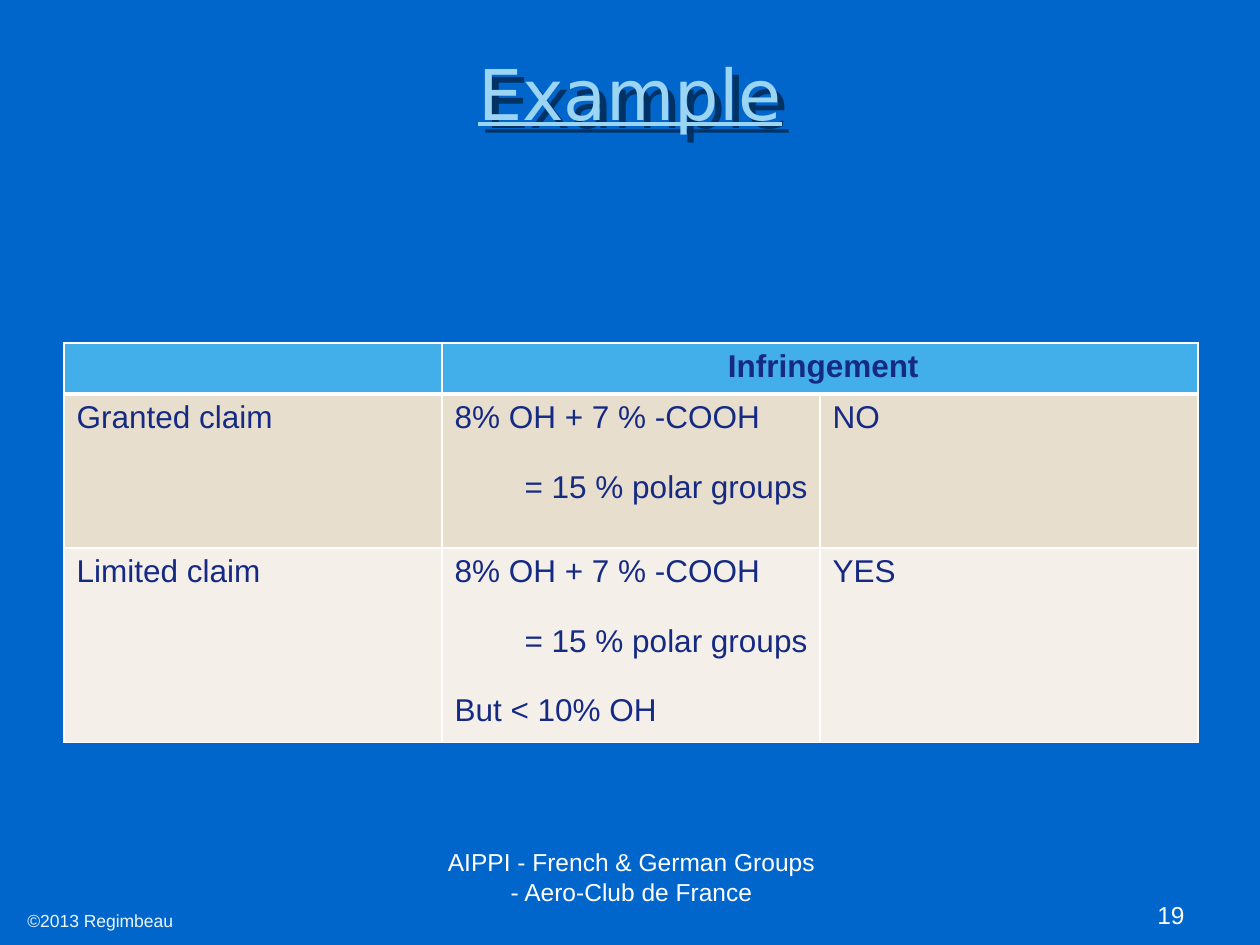
from lxml import etree
from pptx import Presentation
from pptx import util as u
from pptx.dml.color import RGBColor
from pptx.enum import text
from pptx.oxml import ns

SCALE = 914400 / 126
COLORS = {
    "background": "0066CC", "title": "9CD5F4", "shadow": "000000",
    "header": "42AFEA", "granted": "E8DECE", "limited": "F4EFE8",
    "ink": "152A83", "white": "FFFFFF", "copyright": "EBF7FD",
}
FORMULA = ["8% OH + 7 % -COOH", "= 15 % polar groups"]
ROWS = [
    ("header", 51, [[], ["Infringement"], []]),
    ("granted", 154, [["Granted claim"], FORMULA, ["NO"]]),
    ("limited", 190, [["Limited claim"], FORMULA + ["But < 10% OH"], ["YES"]]),
]


def px(length):
    """Turn pixels into EMU."""
    return u.Emu(round(length * SCALE))


def rgb(name):
    """Look up a named colour."""
    return RGBColor.from_string(COLORS[name])


def add_run(paragraph, words, size, color, font="Arial"):
    """Add one styled run to a paragraph."""
    run = paragraph.add_run()
    run.text = words
    run.font.size = u.Pt(size)
    run.font.name = font
    run.font.color.rgb = rgb(color)
    return run


def add_label(slide, box, words, size, color, align, font="Arial"):
    """Add a wrapped one-paragraph text box."""
    shape = slide.shapes.add_textbox(*map(px, box))
    shape.text_frame.word_wrap = True
    paragraph = shape.text_frame.paragraphs[0]
    paragraph.alignment = align
    add_run(paragraph, words, size, color, font)
    return shape


def add_title(slide):
    """Add the underlined title with its text shadow."""
    shape = add_label(slide, (63, 38, 1134, 110), "Example", 40, "title",
                      text.PP_ALIGN.CENTER, "DejaVu Sans")
    shape.text_frame.vertical_anchor = text.MSO_ANCHOR.MIDDLE
    shape.text_frame.paragraphs[0].runs[0].font.underline = True
    effects = etree.SubElement(shape._element.spPr, ns.qn("a:effectLst"))
    shadow = etree.SubElement(effects, ns.qn("a:outerShdw"),
                              dist=str(px(10)), dir="2700000", algn="tl")
    color = etree.SubElement(shadow, ns.qn("a:srgbClr"), val=COLORS["shadow"])
    etree.SubElement(color, ns.qn("a:alpha"), val="50000")


def set_borders(cell, top, bottom):
    """Draw white cell borders, with top and bottom widths in points."""
    properties = cell._tc.get_or_add_tcPr()
    for side, width in (("L", 1), ("R", 1), ("T", top), ("B", bottom)):
        line = etree.SubElement(properties, ns.qn(f"a:ln{side}"), w=str(u.Pt(width)))
        fill = etree.SubElement(line, ns.qn("a:solidFill"))
        etree.SubElement(fill, ns.qn("a:srgbClr"), val=COLORS["white"])


def fill_cell(cell, lines, is_header):
    """Write a cell's paragraphs, indenting the sum."""
    for index, words in enumerate(lines):
        frame = cell.text_frame
        paragraph = frame.add_paragraph() if index else frame.paragraphs[0]
        if index:
            paragraph.space_before = u.Pt(19.6)
        if is_header:
            paragraph.alignment = text.PP_ALIGN.CENTER
        if words.startswith("="):
            paragraph._p.get_or_add_pPr().set("marL", str(px(70)))
        add_run(paragraph, words, 18, "ink").font.bold = is_header


def add_claims_table(slide):
    """Add the table comparing both claims."""
    height = sum(row[1] for row in ROWS)
    frame = slide.shapes.add_table(3, 3, px(64), px(343), px(1134), px(height))
    table = frame.table
    for column in table.columns:
        column.width = px(378)
    for index, (color, row_height, contents) in enumerate(ROWS):
        table.rows[index].height = px(row_height)
        for cell, lines in zip(table.rows[index].cells, contents):
            cell.margin_right = px(6)
            set_borders(cell, 3 if index == 1 else 1, 3 if index == 0 else 1)
            cell.fill.solid()
            cell.fill.fore_color.rgb = rgb(color)
            fill_cell(cell, lines, index == 0)
    table.cell(0, 1).merge(table.cell(0, 2))


def main():
    """Build and save the slide."""
    presentation = Presentation()
    presentation.slide_width, presentation.slide_height = px(1260), px(945)
    slide = presentation.slides.add_slide(presentation.slide_layouts[6])
    slide.background.fill.solid()
    slide.background.fill.fore_color.rgb = rgb("background")
    add_title(slide)
    add_claims_table(slide)
    add_label(slide, (432, 841, 399, 34),
              "AIPPI - French & German Groups - Aero-Club de France",
              14, "white", text.PP_ALIGN.CENTER)
    add_label(slide, (903, 894, 294, 34), "19", 14, "white", text.PP_ALIGN.RIGHT)
    add_label(slide, (15, 904, 300, 30), "©2013 Regimbeau", 10, "copyright",
              text.PP_ALIGN.LEFT)
    presentation.save("out.pptx")


if __name__ == "__main__":
    main()
